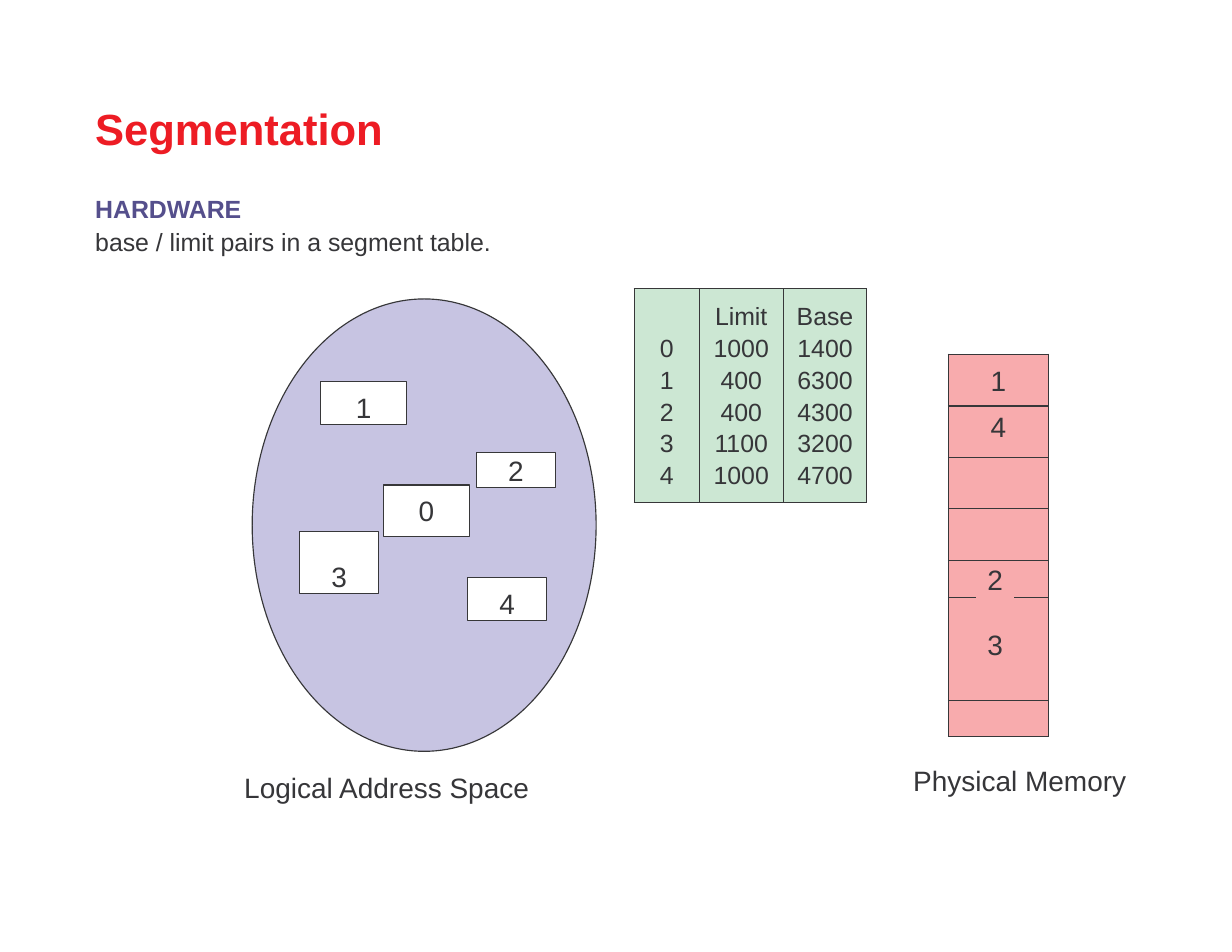
from lxml import etree
from pptx import Presentation
from pptx.dml.color import RGBColor
from pptx.enum.shapes import MSO_SHAPE
from pptx.enum.text import MSO_ANCHOR, MSO_AUTO_SIZE, PP_ALIGN
from pptx.oxml.ns import qn
from pptx.util import Cm, Pt

OVAL, RECTANGLE = MSO_SHAPE.OVAL, MSO_SHAPE.RECTANGLE
TOP, MIDDLE, BOTTOM = MSO_ANCHOR.TOP, MSO_ANCHOR.MIDDLE, MSO_ANCHOR.BOTTOM
LEFT, CENTER = PP_ALIGN.LEFT, PP_ALIGN.CENTER
FONT = "Arial"
PLAIN_TABLE_STYLE = "{2D5ABB26-0587-4C30-8999-92F81FD0307C}"
COLORS = {
    "title": "ED1C24",
    "heading": "554F8C",
    "text": "363639",
    "line": "373739",
    "logical": "C7C4E2",
    "segment": "FFFFFF",
    "table": "CCE7D3",
    "memory": "F8ABAD",
}
SEGMENT_TABLE = [
    ("", "Limit", "Base"),
    ("0", "1000", "1400"),
    ("1", "400", "6300"),
    ("2", "400", "4300"),
    ("3", "1100", "3200"),
    ("4", "1000", "4700"),
]


def color(name):
    """Return the named colour."""
    return RGBColor.from_string(COLORS[name])


def set_font(paragraph, size, color_name="text", bold=False, align=LEFT):
    """Format one paragraph."""
    paragraph.alignment = align
    paragraph.font.name = FONT
    paragraph.font.size = Pt(size)
    paragraph.font.bold = bold
    paragraph.font.color.rgb = color(color_name)


def set_frame(frame, left=0, top=0, anchor=TOP):
    """Set the insets and anchor of a text frame."""
    frame.word_wrap = True
    frame.auto_size = MSO_AUTO_SIZE.NONE
    frame.vertical_anchor = anchor
    frame.margin_left, frame.margin_top = Cm(left), Cm(top)
    frame.margin_right = frame.margin_bottom = 0


def add_title(slide, box, text):
    """Place the title placeholder in the box."""
    title = slide.shapes.title
    title.left, title.top, title.width, title.height = map(Cm, box)
    title.text = text
    set_frame(title.text_frame, 0.03, 0.06)
    set_font(title.text_frame.paragraphs[0], 28, "title", True)


def add_introduction(slide, box):
    """Add the heading and its sentence."""
    frame = slide.shapes.add_textbox(*map(Cm, box)).text_frame
    set_frame(frame, 0.03, 0.21)
    heading = frame.paragraphs[0]
    heading.text = "HARDWARE"
    set_font(heading, 16, "heading", True)
    sentence = frame.add_paragraph()
    sentence.text = "base / limit pairs in a segment table."
    sentence.space_before = Pt(2)
    set_font(sentence, 16)


def add_caption(slide, box, text):
    """Add a caption below a drawing."""
    frame = slide.shapes.add_textbox(*map(Cm, box)).text_frame
    set_frame(frame, 0.03, 0.06)
    frame.text = text
    set_font(frame.paragraphs[0], 18)


def add_outlined_shape(slide, kind, box, fill):
    """Add a filled shape with a thin outline."""
    shape = slide.shapes.add_shape(kind, *map(Cm, box))
    shape.shadow.inherit = False
    shape.fill.solid()
    shape.fill.fore_color.rgb = color(fill)
    shape.line.color.rgb = color("line")
    shape.line.width = Pt(0.75)
    return shape


def add_logical_space(slide, box):
    """Add the ellipse with its numbered segments."""
    left, top, _, _ = box
    add_outlined_shape(slide, OVAL, box, "logical")
    segments = [
        ("1", 1.55, 1.88, 1.96, 0.97, BOTTOM),
        ("3", 1.07, 5.28, 1.8, 1.4, BOTTOM),
        ("2", 5.08, 3.48, 1.8, 0.79, BOTTOM),
        ("4", 4.88, 6.32, 1.8, 0.97, BOTTOM),
        ("0", 2.97, 4.22, 1.96, 1.17, MIDDLE),
    ]
    for number, x, y, width, height, anchor in segments:
        segment_box = (left + x, top + y, width, height)
        segment = add_outlined_shape(slide, RECTANGLE, segment_box, "segment")
        set_frame(segment.text_frame, anchor=anchor)
        segment.text_frame.text = number
        set_font(segment.text_frame.paragraphs[0], 18, align=CENTER)


def add_plain_table(slide, box, widths, heights):
    """Add a table without a style and size its columns and rows."""
    frame = slide.shapes.add_table(len(heights), len(widths), *map(Cm, box))
    table = frame.table
    table.first_row = table.horz_banding = False
    table._tbl.tblPr.find(qn("a:tableStyleId")).text = PLAIN_TABLE_STYLE
    for column, width in zip(table.columns, widths):
        column.width = Cm(width)
    for row, height in zip(table.rows, heights):
        row.height = Cm(height)
    return table


def format_cell(cell, fill, borders, top=0):
    """Set the borders, fill and insets of a cell."""
    properties = cell._tc.get_or_add_tcPr()
    for side in "LRTB":
        if side in borders:
            width = str(Pt(borders[side]))
            line = etree.SubElement(properties, qn(f"a:ln{side}"), w=width)
            solid = etree.SubElement(line, qn("a:solidFill"))
            etree.SubElement(solid, qn("a:srgbClr"), val=COLORS["line"])
    cell.fill.solid()
    cell.fill.fore_color.rgb = color(fill)
    cell.margin_left = cell.margin_right = cell.margin_bottom = 0
    cell.margin_top = Cm(top)


def add_segment_table(slide, box):
    """Add the table of limits and bases."""
    heights = [1.04] + [0.72] * 4 + [0.93]
    table = add_plain_table(slide, box, [1.48, 1.9, 1.9], heights)
    last = len(SEGMENT_TABLE) - 1
    for row, values in enumerate(SEGMENT_TABLE):
        for column, value in enumerate(values):
            cell = table.cell(row, column)
            outer = {0: "T", last: "B"}.get(row, "")
            borders = dict.fromkeys("LR" + outer, 0.75)
            format_cell(cell, "table", borders, 0.28 if row == 0 else 0)
            cell.text = value
            paragraph = cell.text_frame.paragraphs[0]
            paragraph.line_spacing = Pt(19.1 if row == 0 else 18.2)
            set_font(paragraph, 16, align=CENTER)


def add_physical_memory(slide, box):
    """Add the column of memory blocks."""
    heights = [1.17] * 4 + [0.83, 2.34, 0.83]
    table = add_plain_table(slide, box, [0.63, 0.86, 0.77], heights)
    for row in (0, 1, 2, 3, 6):
        table.cell(row, 0).merge(table.cell(row, 2))
    table.cell(4, 1).merge(table.cell(5, 1))
    contents = {(0, 0): (["1"], 0.28), (1, 0): (["4"], 0.15), (4, 1): (["2", "3"], 0.1)}
    for row in range(len(heights)):
        for column in range(3):
            cell = table.cell(row, column)
            if cell.is_spanned:
                continue
            sides = "TB" if row in (4, 5) else "LRTB"
            if row in (4, 5):
                sides += ("L", "", "R")[column]
            borders = dict.fromkeys(sides, 0.75)
            if row < 2:
                borders["BT"[row]] = 1.5
            numbers, top = contents.get((row, column), ([""], 0))
            format_cell(cell, "memory", borders, top)
            cell.text = "\n".join(numbers)
            for index, paragraph in enumerate(cell.text_frame.paragraphs):
                if index:
                    paragraph.space_before = Pt(21.8)
                set_font(paragraph, 18, align=CENTER)


def main():
    """Build and save the slide."""
    presentation = Presentation()
    presentation.slide_width, presentation.slide_height = Cm(27.94), Cm(21.59)
    slide = presentation.slides.add_slide(presentation.slide_layouts[5])
    add_title(slide, (2.13, 2.26, 7, 1.27), "Segmentation")
    add_introduction(slide, (2.13, 4.19, 9.7, 1.57))
    add_logical_space(slide, (5.72, 6.78, 7.8, 10.26))
    add_caption(slide, (5.51, 17.42, 6.8, 0.84), "Logical Address Space")
    add_segment_table(slide, (14.38, 6.55, 5.28, 4.85))
    add_physical_memory(slide, (21.51, 8.03, 2.26, 8.68))
    add_caption(slide, (20.68, 17.25, 5.2, 0.84), "Physical Memory")
    presentation.save("out.pptx")


if __name__ == "__main__":
    main()
